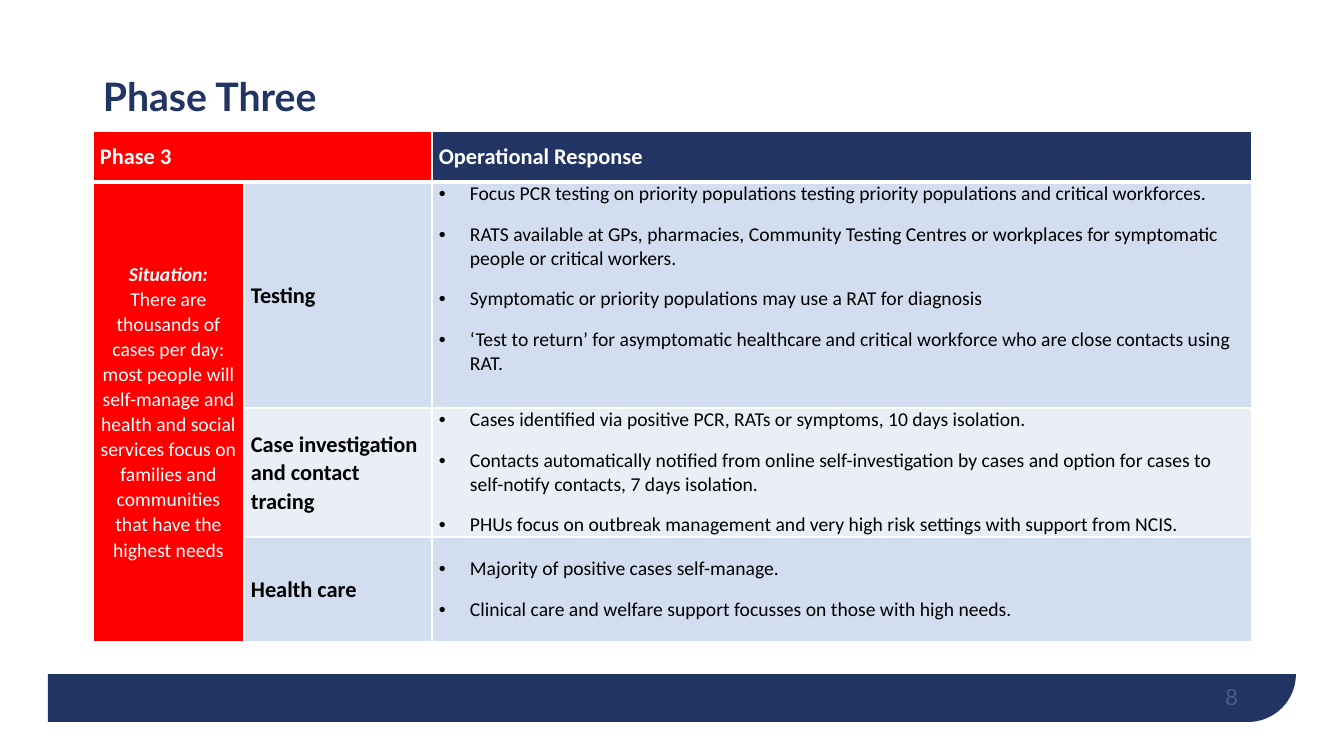
from lxml.etree import SubElement
from pptx import Presentation
from pptx.dml.color import RGBColor
from pptx.enum.shapes import MSO_SHAPE
from pptx.enum.text import MSO_ANCHOR, PP_ALIGN
from pptx.oxml.ns import qn
from pptx.util import Emu, Pt

COLORS = {
    "navy": "213463", "red": "FF0000", "white": "FFFFFF", "black": "000000",
    "blue band": "D2DEEF", "pale band": "EAEFF7",
}
TITLE = "Phase Three"
PAGE_NUMBER = "8"
HEADERS = ("Phase 3", "Operational Response")
SITUATION = (
    "Situation:",
    "There are thousands of cases per day: most people will self-manage and health "
    "and social services focus on families and communities that have the highest needs",
)
# topic, band colour, row height in px, anchor of the responses, responses
TOPICS = [
    ("Testing", "blue band", 226, MSO_ANCHOR.TOP, [
        "Focus PCR testing on priority populations testing priority populations and critical workforces.",
        "RATS available at GPs, pharmacies, Community Testing Centres or workplaces for symptomatic "
        "people or critical workers.",
        "Symptomatic or priority populations may use a RAT for diagnosis",
        "‘Test to return’ for asymptomatic healthcare and critical workforce who are close contacts "
        "using RAT.",
    ]),
    ("Case investigation and contact tracing", "pale band", 129, MSO_ANCHOR.MIDDLE, [
        "Cases identified via positive PCR, RATs or symptoms, 10 days isolation.",
        "Contacts automatically notified from online self-investigation by cases and option for cases "
        "to self-notify contacts, 7 days isolation.",
        "PHUs focus on outbreak management and very high risk settings with support from NCIS.",
    ]),
    ("Health care", "blue band", 105, MSO_ANCHOR.MIDDLE, [
        "Majority of positive cases self-manage.",
        "Clinical care and welfare support focusses on those with high needs.",
    ]),
]
COLUMN_WIDTHS = (151, 188, 820)
HEADER_HEIGHT = 51
TABLE_LEFT, TABLE_TOP = 93, 131
BULLET_INDENT = 31


def px(length):
    return Emu(round(length * 914400 / 100.8))


def rgb(name):
    return RGBColor.from_string(COLORS[name])


def add_run(paragraph, text, size, color, font="Calibri", bold=False, italic=False):
    run = paragraph.add_run()
    run.text = text
    run.font.name, run.font.size = font, Pt(size)
    run.font.bold, run.font.italic = bold, italic
    run.font.color.rgb = rgb(color)
    return run


def add_block(slide, kind, color, *box):
    shape = slide.shapes.add_shape(kind, *map(px, box))
    shape.shadow.inherit = False
    shape.fill.solid()
    shape.fill.fore_color.rgb = rgb(color)
    shape.line.fill.background()
    return shape


def add_label(slide, box, anchor):
    frame = slide.shapes.add_textbox(*map(px, box)).text_frame
    frame.word_wrap = True
    frame.vertical_anchor = anchor
    return frame


def style_cell(cell, color, anchor=MSO_ANCHOR.MIDDLE, bottom_width=1):
    """Set margins, white borders and fill, and return the first paragraph."""
    cell.margin_left = cell.margin_right = px(7)
    cell.margin_top = cell.margin_bottom = 0
    cell.vertical_anchor = anchor
    properties = cell._tc.get_or_add_tcPr()
    for side, width in (("L", 1), ("R", 1), ("T", 1), ("B", bottom_width)):
        border = SubElement(properties, qn(f"a:ln{side}"), w=str(Pt(width)))
        fill = SubElement(border, qn("a:solidFill"))
        SubElement(fill, qn("a:srgbClr"), val=COLORS["white"])
    cell.fill.solid()
    cell.fill.fore_color.rgb = rgb(color)
    paragraph = cell.text_frame.paragraphs[0]
    paragraph.line_spacing = 1.05
    return paragraph


def add_footer(slide):
    footer = add_block(slide, MSO_SHAPE.ROUND_1_RECTANGLE, "navy", 48, 37, 1248, 685)
    footer.adjustments[0] = 0.07
    footer.rotation = 180
    footer._element.spPr.xfrm.set("flipH", "1")
    add_block(slide, MSO_SHAPE.RECTANGLE, "white", 0, 0, 1344, 674)
    frame = add_label(slide, (936, 670, 302, 40), MSO_ANCHOR.BOTTOM)
    frame.margin_left = frame.margin_right = frame.margin_top = frame.margin_bottom = 0
    paragraph = frame.paragraphs[0]
    paragraph.alignment = PP_ALIGN.RIGHT
    run = add_run(paragraph, PAGE_NUMBER, 16, "white", "Lato")
    color = run._r.rPr.find(f"{qn('a:solidFill')}/{qn('a:srgbClr')}")
    SubElement(color, qn("a:alpha"), val="20000")


def add_title(slide):
    frame = add_label(slide, (93, 40, 1051, 118), MSO_ANCHOR.MIDDLE)
    paragraph = frame.paragraphs[0]
    paragraph.line_spacing = 0.9
    add_run(paragraph, TITLE, 28, "navy", "Lato", bold=True)


def add_responses(cell, color, anchor, responses):
    first = style_cell(cell, color, anchor)
    for index, response in enumerate(responses):
        paragraph = cell.text_frame.add_paragraph() if index else first
        properties = paragraph._p.get_or_add_pPr()
        properties.set("marL", str(px(BULLET_INDENT)))
        properties.set("indent", str(-px(BULLET_INDENT)))
        SubElement(properties, qn("a:buFont"), typeface="Arial")
        SubElement(properties, qn("a:buChar"), char="•")
        paragraph.line_spacing = 1.0
        paragraph.space_before = Pt(6 if index else 0)
        paragraph.space_after = Pt(6)
        add_run(paragraph, response, 14, "black")


def add_phase_table(slide):
    heights = [HEADER_HEIGHT] + [topic[2] for topic in TOPICS]
    table = slide.shapes.add_table(
        len(heights), len(COLUMN_WIDTHS), px(TABLE_LEFT), px(TABLE_TOP),
        px(sum(COLUMN_WIDTHS)), px(sum(heights))).table
    for column, width in zip(table.columns, COLUMN_WIDTHS):
        column.width = px(width)
    for row, height in zip(table.rows, heights):
        row.height = px(height)

    table.cell(0, 0).merge(table.cell(0, 1))
    table.cell(1, 0).merge(table.cell(len(TOPICS), 0))
    for column, text, color in zip((0, 2), HEADERS, ("red", "navy")):
        paragraph = style_cell(table.cell(0, column), color, bottom_width=3)
        add_run(paragraph, text, 16, "white", bold=True)

    paragraph = style_cell(table.cell(1, 0), "red")
    paragraph.alignment = PP_ALIGN.CENTER
    paragraph.space_after = Pt(8)
    heading, description = SITUATION
    add_run(paragraph, heading, 14, "white", bold=True, italic=True)
    paragraph.add_line_break()
    add_run(paragraph, description, 14, "white")

    for row, (topic, color, _, anchor, responses) in enumerate(TOPICS, 1):
        paragraph = style_cell(table.cell(row, 1), color)
        paragraph.space_after = Pt(8)
        add_run(paragraph, topic, 16, "black", bold=True)
        add_responses(table.cell(row, 2), color, anchor, responses)


def main():
    presentation = Presentation()
    presentation.slide_width, presentation.slide_height = px(1344), px(756)
    slide = presentation.slides.add_slide(presentation.slide_layouts[6])
    add_footer(slide)
    add_title(slide)
    add_phase_table(slide)
    presentation.save("out.pptx")


if __name__ == "__main__":
    main()
